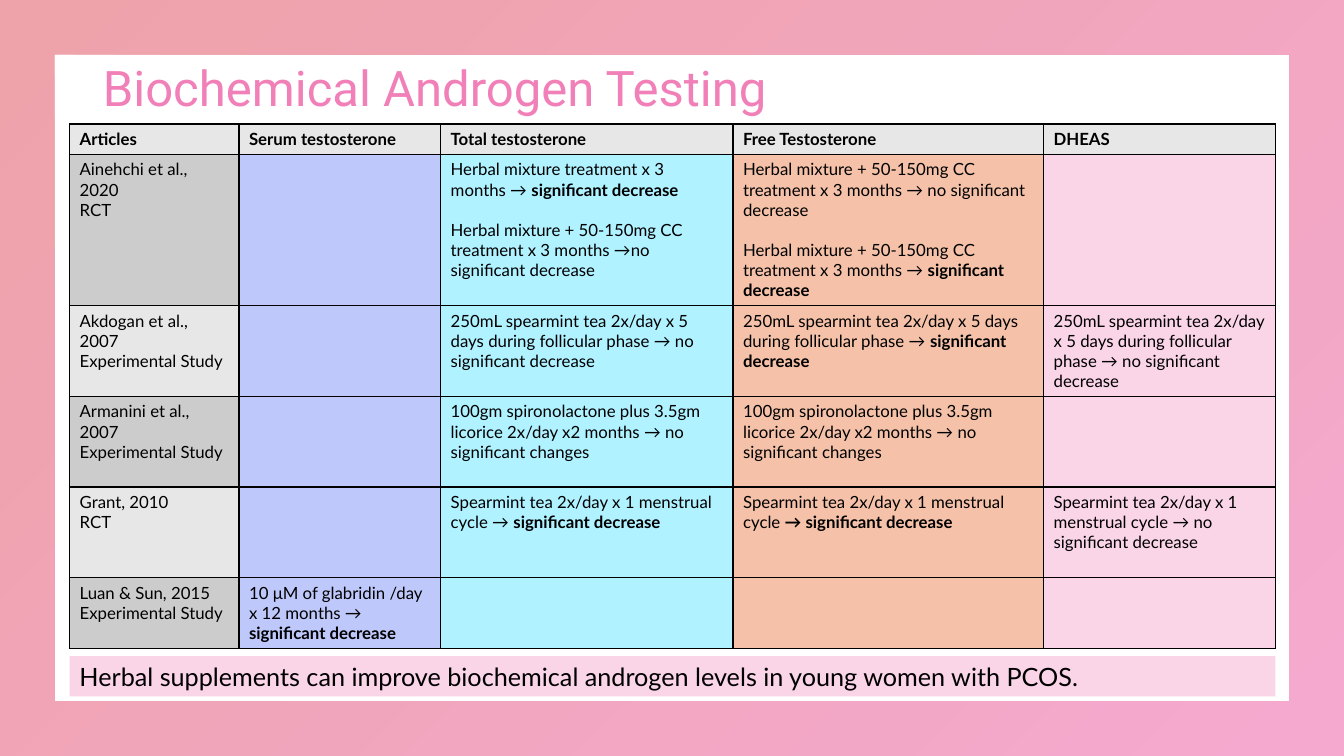
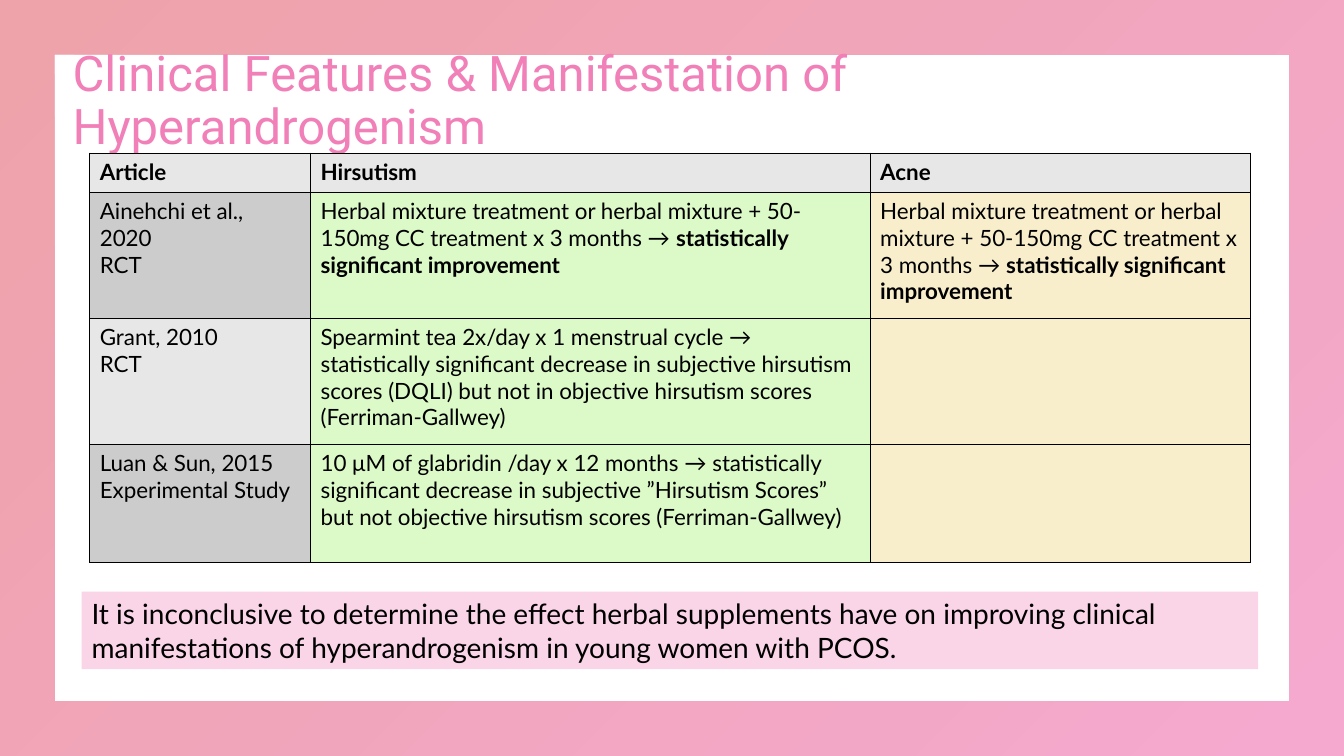
from dataclasses import dataclass

from lxml import etree
from pptx import Presentation
from pptx.dml.color import RGBColor
from pptx.enum import shapes, text
from pptx.oxml import ns
from pptx.util import Inches, Pt


@dataclass(frozen=True)
class Theme:
    title_font: str = "Roboto"
    body_font: str = "Lato"
    title_size: int = 35
    title_color: str = "F17FB8"
    ink: str = "000000"
    header: str = "E7E7E7"
    article_fills: tuple = ("CCCCCC", "E7E7E7")
    conclusion: str = "FAD4E7"
    frame_stops: tuple = ("D51728", "E72989")
    frame_opacity: int = 40
    frame_thickness: float = 0.072
    border: int = 1


THEME = Theme()
WIDTH, HEIGHT = 13.33, 7.5

AINEHCHI = "Ainehchi et al., 2020\nRCT"
AKDOGAN = "Akdogan et al., 2007\nExperimental Study"
ARMANINI = "Armanini et al., 2007\nExperimental Study"
GRANT = "Grant, 2010\nRCT"
LUAN = "Luan & Sun, 2015\nExperimental Study"

MIXTURE_CC = "Herbal mixture + 50-150mg CC treatment x 3 months →"
TEA_5_DAYS = "250mL spearmint tea 2x/day x 5 days during follicular phase →"
LICORICE = "100gm spironolactone plus 3.5gm licorice 2x/day x2 months → no significant changes"
TEA_CYCLE = "Spearmint tea 2x/day x 1 menstrual cycle"
GLABRIDIN = "10 μM of glabridin /day x 12 months →"
EITHER_MIXTURE = ("Herbal mixture treatment or herbal mixture + 50-150mg CC treatment "
                  "x 3 months → **statistically significant improvement**")

# Text between double asterisks is bold; a line break starts a paragraph.
SLIDES = [
    dict(
        title="Biochemical Androgen Testing",
        title_box=(0.92, 0.66, 11.5, 0.48),
        table_at=(0.69, 1.23),
        table_size=12,
        columns=[("Articles", 1.68, None), ("Serum testosterone", 2, "BEC8FA"),
                 ("Total testosterone", 2.9, "B0F2FF"),
                 ("Free Testosterone", 3.08, "F5C2A9"), ("DHEAS", 2.3, "FAD4E7")],
        row_heights=[0.3, 1.5, 0.9, 0.9, 0.9, 0.7],
        rows=[
            (AINEHCHI, "",
             "Herbal mixture treatment x 3 months → **significant decrease**\n"
             f"{MIXTURE_CC}no significant decrease",
             f"{MIXTURE_CC} no significant decrease\n{MIXTURE_CC} **significant decrease**",
             ""),
            (AKDOGAN, "", f"{TEA_5_DAYS} no significant decrease",
             f"{TEA_5_DAYS} **significant decrease**",
             f"{TEA_5_DAYS} no significant decrease"),
            (ARMANINI, "", LICORICE, LICORICE, ""),
            (GRANT, "", f"{TEA_CYCLE} → **significant decrease**",
             f"{TEA_CYCLE} **→ significant decrease**",
             f"{TEA_CYCLE} → no significant decrease"),
            (LUAN, f"{GLABRIDIN} **significant decrease**", "", "", ""),
        ],
        conclusion="Herbal supplements can improve biochemical androgen levels "
                   "in young women with PCOS.",
        conclusion_box=(0.69, 6.51, 11.96, 0.4),
        conclusion_size=18,
    ),
    dict(
        title="Clinical Features & Manifestation of Hyperandrogenism",
        title_box=(0.62, 0.5, 12.04, 1.02),
        table_at=(0.89, 1.52),
        table_size=16,
        columns=[("Article", 2.19, None), ("Hirsutism", 5.55, "DCF9C8"),
                 ("Acne", 3.77, "F9EECC")],
        row_heights=[0.39, 1.25, 1.25, 1.17],
        rows=[
            (AINEHCHI, EITHER_MIXTURE, EITHER_MIXTURE),
            (GRANT, f"{TEA_CYCLE} → statistically significant decrease in subjective "
                    "hirsutism scores (DQLI) but not in objective hirsutism scores "
                    "(Ferriman-Gallwey)", ""),
            (LUAN, f"{GLABRIDIN} statistically significant decrease in subjective "
                   "”Hirsutism Scores” but not objective hirsutism scores "
                   "(Ferriman-Gallwey)", ""),
        ],
        conclusion="It is inconclusive to determine the effect herbal supplements have on "
                   "improving clinical manifestations of hyperandrogenism in young women "
                   "with PCOS.",
        conclusion_box=(0.81, 5.87, 11.67, 0.77),
        conclusion_size=20,
    ),
]


def write(frame, content, *, size, font=THEME.body_font, color=THEME.ink,
          gap=0, line_spacing=None):
    """Fill a text frame, switching bold on and off at each double asterisk."""
    frame.word_wrap = True
    for index, line in enumerate(content.split("\n")):
        paragraph = frame.add_paragraph() if index else frame.paragraphs[0]
        paragraph.alignment = text.PP_ALIGN.LEFT
        if index and gap:
            paragraph.space_before = Pt(gap)
        if line_spacing:
            paragraph.line_spacing = line_spacing
        paragraph.font.size = Pt(size)
        for part, words in enumerate(line.split("**")):
            if not words:
                continue
            run = paragraph.add_run()
            run.text = words
            run.font.name, run.font.size = font, Pt(size)
            run.font.bold = part % 2 == 1
            run.font.color.rgb = RGBColor.from_string(color)


def paint(fill, color):
    fill.solid()
    fill.fore_color.rgb = RGBColor.from_string(color)


def add_borders(cell):
    properties = cell._tc.get_or_add_tcPr()
    for index, side in enumerate(("lnL", "lnR", "lnT", "lnB")):
        line = etree.Element(ns.qn(f"a:{side}"), w=str(Pt(THEME.border)))
        solid = etree.SubElement(line, ns.qn("a:solidFill"))
        etree.SubElement(solid, ns.qn("a:srgbClr"), val=THEME.ink)
        properties.insert(index, line)


def add_frame(slide, layout):
    """Draw the gradient frame and hand it to the layout all slides share."""
    frame = slide.shapes.add_shape(shapes.MSO_SHAPE.FRAME, 0, 0,
                                   Inches(WIDTH), Inches(HEIGHT))
    frame.adjustments[0] = THEME.frame_thickness
    frame.shadow.inherit = False
    frame.line.fill.background()
    frame.fill.gradient()
    frame.fill.gradient_angle = 315
    for stop, color in zip(frame.fill.gradient_stops, THEME.frame_stops):
        stop.color.rgb = RGBColor.from_string(color)
    for color in frame.element.iter(ns.qn("a:gs")):
        etree.SubElement(color[0], ns.qn("a:alpha"), val=str(THEME.frame_opacity * 1000))
    frame.element.nvSpPr.cNvPr.set("id", "100")
    layout.shapes.element.insert(2, frame.element)


def add_title(slide, content, box):
    title = slide.shapes.title
    title.left, title.top, title.width, title.height = map(Inches, box)
    title.text_frame.auto_size = text.MSO_AUTO_SIZE.NONE
    title.text_frame.vertical_anchor = text.MSO_ANCHOR.MIDDLE
    write(title.text_frame, content, size=THEME.title_size, font=THEME.title_font,
          color=THEME.title_color, line_spacing=0.9)


def add_findings(slide, at, columns, heights, rows, size):
    names, widths, fills = zip(*columns)
    grid = [tuple(f"**{name}**" for name in names), *rows]
    table = slide.shapes.add_table(len(grid), len(columns), *map(Inches, at),
                                   Inches(sum(widths)), Inches(sum(heights))).table
    table.first_row = table.horz_banding = False
    for column, width in zip(table.columns, widths):
        column.width = Inches(width)
    for row, height in zip(table.rows, heights):
        row.height = Inches(height)
    for r, contents in enumerate(grid):
        for c, content in enumerate(contents):
            cell = table.cell(r, c)
            article_fill = THEME.article_fills[(r - 1) % 2]
            paint(cell.fill, THEME.header if r == 0 else fills[c] or article_fill)
            add_borders(cell)
            write(cell.text_frame, content, size=size, gap=size * 1.2 if c else 0)


def add_conclusion(slide, content, box, size):
    band = slide.shapes.add_textbox(*map(Inches, box))
    paint(band.fill, THEME.conclusion)
    write(band.text_frame, content, size=size)


def main():
    deck = Presentation()
    deck.slide_width, deck.slide_height = Inches(WIDTH), Inches(HEIGHT)
    layout = deck.slide_layouts[5]
    for number, page in enumerate(SLIDES):
        slide = deck.slides.add_slide(layout)
        if number == 0:
            add_frame(slide, layout)
        add_title(slide, page["title"], page["title_box"])
        add_findings(slide, page["table_at"], page["columns"], page["row_heights"],
                     page["rows"], page["table_size"])
        add_conclusion(slide, page["conclusion"], page["conclusion_box"],
                       page["conclusion_size"])
    deck.save("out.pptx")


if __name__ == "__main__":
    main()
